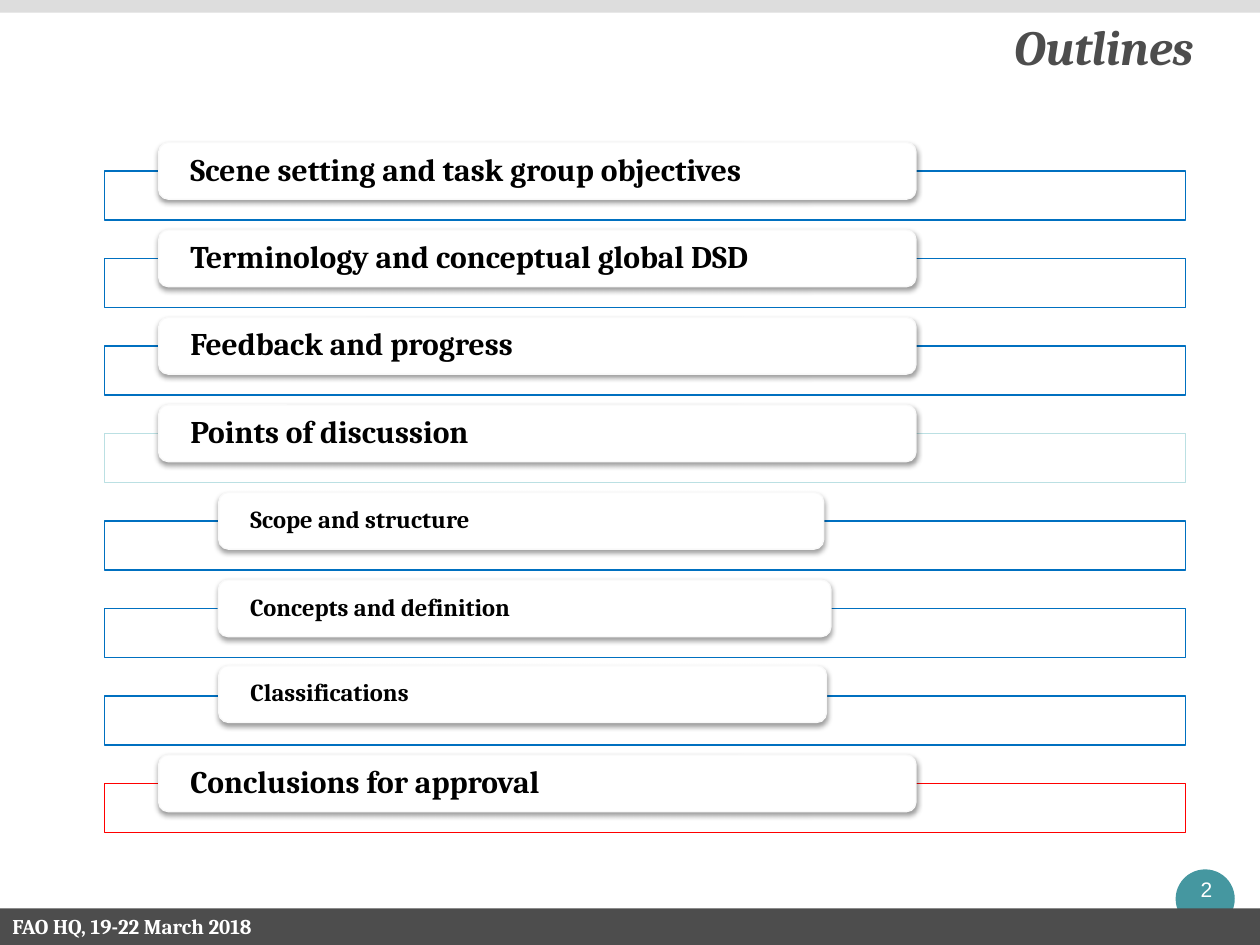
from lxml.etree import SubElement
from pptx import Presentation
from pptx.dml.color import RGBColor
from pptx.enum.shapes import MSO_SHAPE
from pptx.enum.text import MSO_ANCHOR, PP_ALIGN
from pptx.oxml.ns import qn
from pptx.util import Pt

TITLE = "Outlines"
FOOTER = "FAO HQ, 19-22 March 2018"
PAGE_NUMBER = "2"

# text, level, frame colour, card left, card top offset, card width
TOPIC_CARD = (90.7, 0, 432.7)
TOPICS = [
    ("Scene setting and task group objectives", "topic", "blue", *TOPIC_CARD),
    ("Terminology and conceptual global DSD", "topic", "blue", *TOPIC_CARD),
    ("Feedback and progress", "topic", "blue", *TOPIC_CARD),
    ("Points of discussion", "topic", "pale", *TOPIC_CARD),
    ("Scope and structure", "subtopic", "blue", 125.1, 0, 345.6),
    ("Concepts and definition", "subtopic", "blue", 124.8, 0, 350),
    ("Classifications", "subtopic", "blue", 125.1, -1, 347.2),
    ("Conclusions for approval", "topic", "red", *TOPIC_CARD),
]

THEME = {
    "font": "Cambria",
    "number_font": "Arial",
    "colors": {
        "white": "FFFFFF", "black": "000000", "dark": "4D4D4D",
        "light": "DDDDDD", "teal": "4597A0", "edge": "F9F9F9",
        "blue": "0070C0", "pale": "BBE0E3", "red": "FF0000",
    },
    "sizes": {"title": 28, "topic": 18, "subtopic": 14, "small": 12},
}

ROW_PITCH = 50
CARD_TOP, CARD_HEIGHT = 81.4, 32.4
FRAME_LEFT, FRAME_TOP, FRAME_WIDTH, FRAME_HEIGHT = 59.8, 97.8, 617.8, 28


def color(name):
    return RGBColor.from_string(THEME["colors"][name])


def add_shape(slide, kind, box, fill, line=None):
    shape = slide.shapes.add_shape(kind, *map(Pt, box))
    shape.shadow.inherit = False
    shape.fill.solid()
    shape.fill.fore_color.rgb = color(fill)
    if line:
        shape.line.color.rgb = color(line)
        shape.line.width = Pt(0.75)
    else:
        shape.line.fill.background()
    return shape


def write(shape, text, size, fill, align=PP_ALIGN.LEFT, font=THEME["font"],
          bold=True, italic=False):
    shape.text_frame.word_wrap = True
    paragraph = shape.text_frame.paragraphs[0]
    paragraph.alignment = align
    run = paragraph.add_run()
    run.text = text
    run.font.name = font
    run.font.size = Pt(THEME["sizes"][size])
    run.font.bold = bold
    run.font.italic = italic
    run.font.color.rgb = color(fill)
    return paragraph


def set_alpha(color_element, percent):
    SubElement(color_element, qn("a:alpha"), val=str(percent * 1000))


def add_soft_shadow(shape):
    effects = shape._element.spPr.find(qn("a:effectLst"))
    shadow = SubElement(effects, qn("a:outerShdw"), blurRad=str(Pt(3.1)),
                        dist=str(Pt(1.6)), dir="5400000", rotWithShape="0")
    shadow_color = SubElement(shadow, qn("a:srgbClr"),
                              val=THEME["colors"]["black"])
    set_alpha(shadow_color, 38)


def add_topic(slide, row, text, level, frame_color, left, offset, width):
    shift = row * ROW_PITCH
    frame = add_shape(slide, MSO_SHAPE.RECTANGLE,
                      (FRAME_LEFT, FRAME_TOP + shift, FRAME_WIDTH, FRAME_HEIGHT),
                      "white", frame_color)
    fill = frame._element.spPr.find(qn("a:solidFill"))
    set_alpha(fill.find(qn("a:srgbClr")), 90)

    card = add_shape(slide, MSO_SHAPE.ROUNDED_RECTANGLE,
                     (left, CARD_TOP + shift + offset, width, CARD_HEIGHT),
                     "white", "edge")
    add_soft_shadow(card)
    text_frame = card.text_frame
    text_frame.margin_left = text_frame.margin_right = Pt(16.5)
    text_frame.margin_top = text_frame.margin_bottom = 0
    text_frame.vertical_anchor = MSO_ANCHOR.MIDDLE
    write(card, text, level, "black").line_spacing = 0.9


def add_title(slide):
    title = slide.shapes.title
    title.left, title.top, title.width, title.height = map(
        Pt, (510.5, -2.2, 178.6, 56.9))
    title.text_frame.vertical_anchor = MSO_ANCHOR.MIDDLE
    write(title, TITLE, "title", "dark", PP_ALIGN.RIGHT, italic=True)


def add_bands(slide):
    add_shape(slide, MSO_SHAPE.RECTANGLE, (0, -2.2, 720, 9.4), "light")
    add_shape(slide, MSO_SHAPE.OVAL, (671.8, 496.8, 33.8, 33.8), "teal")
    number = slide.shapes.add_textbox(*map(Pt, (663.1, 497.5, 52.6, 21.6)))
    write(number, PAGE_NUMBER, "small", "white", PP_ALIGN.CENTER,
          THEME["number_font"], bold=False)
    add_shape(slide, MSO_SHAPE.RECTANGLE, (0, 519.1, 720, 22.3), "dark")
    footer = slide.shapes.add_textbox(*map(Pt, (0, 518.4, 720, 21.6)))
    write(footer, FOOTER, "small", "white")


def main():
    presentation = Presentation()
    presentation.slide_width, presentation.slide_height = Pt(720), Pt(540)
    slide = presentation.slides.add_slide(presentation.slide_layouts[5])
    add_bands(slide)
    add_title(slide)
    for row, topic in enumerate(TOPICS):
        add_topic(slide, row, *topic)
    presentation.save("out.pptx")


if __name__ == "__main__":
    main()
